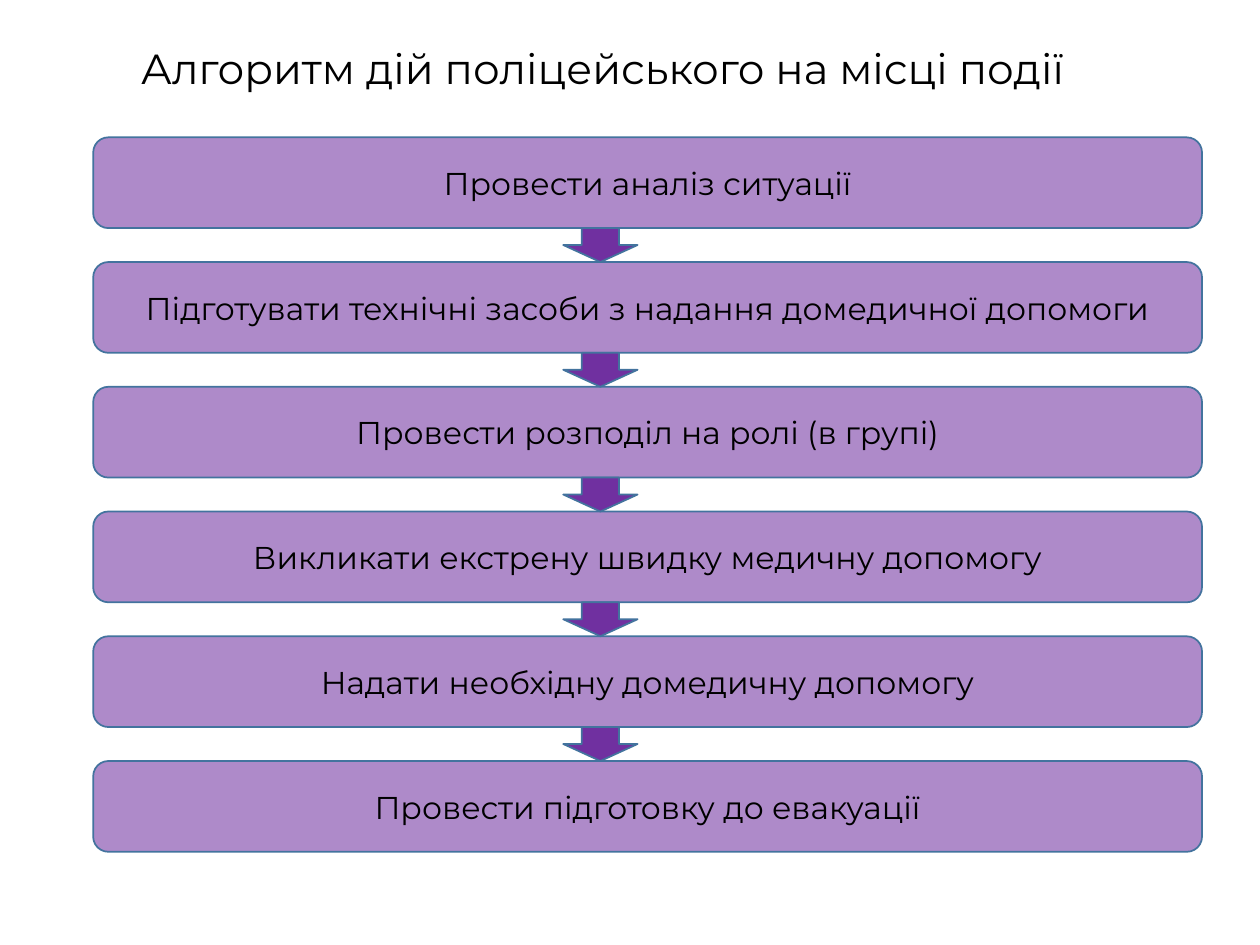
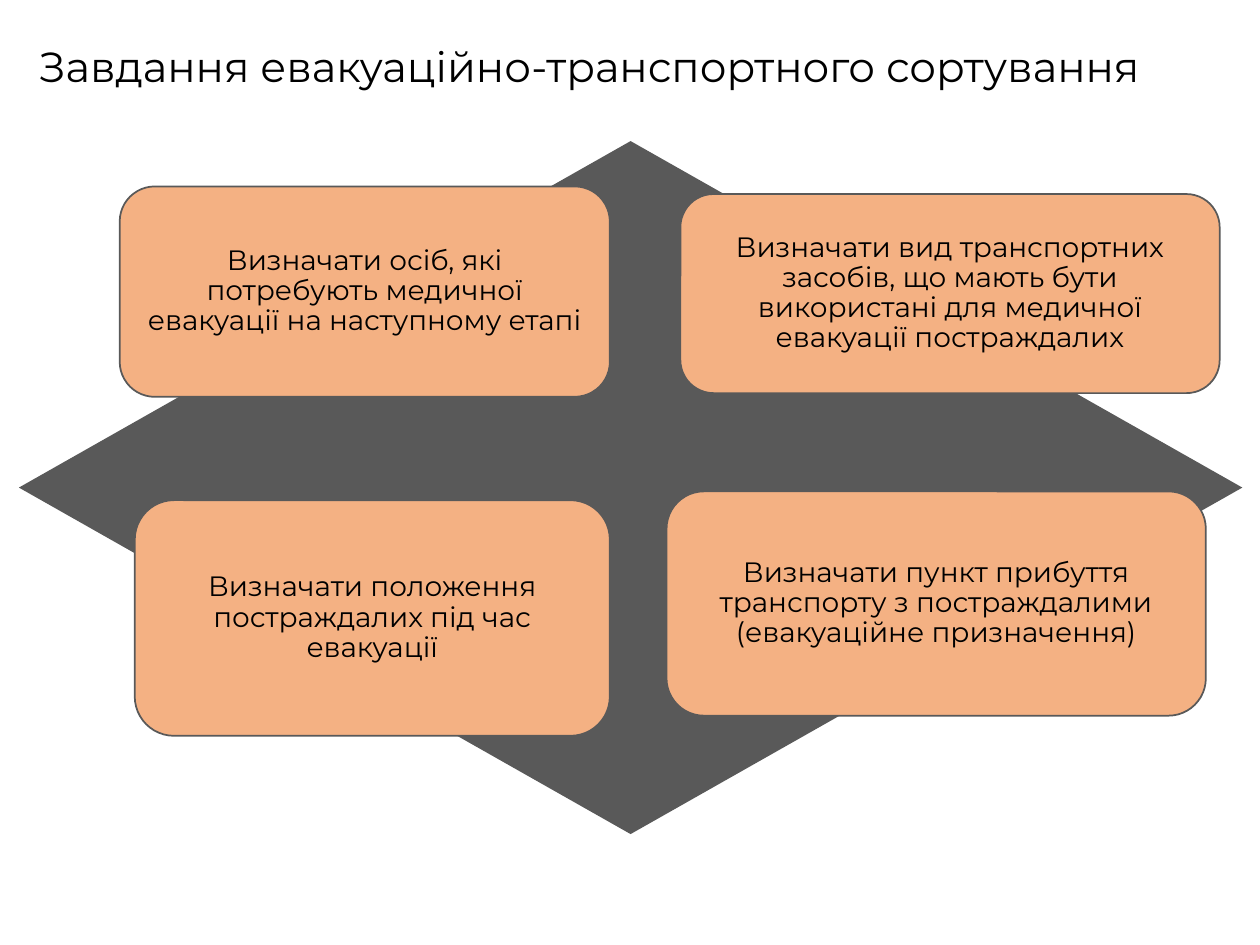
import pptx
import pptx.dml.color
import pptx.enum.shapes
import pptx.enum.text
import pptx.oxml
import pptx.oxml.ns
import pptx.util
from pptx.util import Inches

COLORS = {
    "text": "000000",
    "purple": "7030A0",
    "step_line": "43739E",
    "gray": "595959",
    "orange": "F4B183",
}
FONT = "Montserrat"
SHAPES = pptx.enum.shapes.MSO_SHAPE
ALIGN = pptx.enum.text.PP_ALIGN

STEPS = [
    "Провести аналіз ситуації",
    "Підготувати технічні засоби з надання домедичної допомоги",
    "Провести розподіл на ролі (в групі)",
    "Викликати екстрену швидку медичну допомогу",
    "Надати необхідну домедичну допомогу",
    "Провести підготовку до евакуації",
]
STEP_LEFT, STEP_TOP, STEP_WIDTH, STEP_HEIGHT, STEP_PITCH = 0.74, 1.09, 8.8, 0.72, 0.99

TASKS = [
    ("Визначати осіб, які потребують медичної евакуації на наступному етапі",
     (0.95, 1.48, 3.89, 1.67)),
    ("Визначати вид транспортних засобів, що мають бути використані для медичної "
     "евакуації постраждалих", (5.4, 1.54, 4.28, 1.58)),
    ("Визначати положення постраждалих під час евакуації", (1.07, 3.97, 3.77, 1.87)),
    ("Визначати пункт прибуття транспорту з постраждалими (евакуаційне призначення)",
     (5.29, 3.9, 4.28, 1.78)),
]


def rgb(name):
    return pptx.dml.color.RGBColor.from_string(COLORS[name])


def write_text(shape, text, size, align=ALIGN.CENTER, wrap=True, margin=None,
               line_spacing=None, space_after=None,
               anchor=pptx.enum.text.MSO_ANCHOR.MIDDLE):
    frame = shape.text_frame
    frame.word_wrap = wrap
    frame.vertical_anchor = anchor
    if margin is not None:
        frame.margin_left = frame.margin_right = Inches(margin)
        frame.margin_top = frame.margin_bottom = Inches(margin)
    paragraph = frame.paragraphs[0]
    paragraph.alignment = align
    paragraph.line_spacing = line_spacing
    if space_after is not None:
        paragraph.space_after = pptx.util.Pt(space_after)
    run = paragraph.add_run()
    run.text = text
    run.font.name = FONT
    run.font.size = pptx.util.Pt(size)
    run.font.color.rgb = rgb("text")


def add_title(slide, text, left, top, width):
    box = slide.shapes.add_textbox(Inches(left), Inches(top), Inches(width), Inches(0.5))
    write_text(box, text, 24, align=ALIGN.LEFT, wrap=False,
               anchor=pptx.enum.text.MSO_ANCHOR.TOP)
    box.text_frame.auto_size = pptx.enum.text.MSO_AUTO_SIZE.SHAPE_TO_FIT_TEXT


def add_filled_shape(slide, kind, bounds, fill, line=None, opacity=None):
    shape = slide.shapes.add_shape(kind, *map(Inches, bounds))
    shape.shadow.inherit = False
    shape.fill.solid()
    shape.fill.fore_color.rgb = rgb(fill)
    if opacity is not None:
        color = shape.fill._xPr.find(".//" + pptx.oxml.ns.qn("a:srgbClr"))
        alpha = pptx.oxml.parse_xml(
            f'<a:alpha {pptx.oxml.ns.nsdecls("a")} val="{opacity * 1000}"/>')
        color.append(alpha)
    if line:
        shape.line.color.rgb = rgb(line)
        shape.line.width = pptx.util.Pt(1)
    else:
        shape.line.fill.background()
    return shape


def add_step(slide, text, top):
    step = add_filled_shape(slide, SHAPES.ROUNDED_RECTANGLE,
                            (STEP_LEFT, top, STEP_WIDTH, STEP_HEIGHT),
                            "purple", "step_line", opacity=56)
    write_text(step, text, 18)


def add_task(slide, text, bounds):
    card = add_filled_shape(slide, SHAPES.ROUNDED_RECTANGLE, bounds, "orange", "gray")
    write_text(card, text, 16, margin=0.07, line_spacing=0.9, space_after=5.6)


def build_algorithm(slide):
    add_title(slide, "Алгоритм дій поліцейського на місці події", 1.02, 0.29, 8.24)
    tops = [STEP_TOP + index * STEP_PITCH for index in range(len(STEPS))]
    for text, top in zip(STEPS, tops):
        add_step(slide, text, top)
    for top in tops[:-1]:
        add_filled_shape(slide, SHAPES.DOWN_ARROW, (4.47, top + STEP_HEIGHT, 0.59, 0.27),
                         "purple", "step_line")


def build_tasks(slide):
    add_title(slide, "Завдання евакуаційно-транспортного сортування", 0.21, 0.27, 9.65)
    add_filled_shape(slide, SHAPES.DIAMOND, (0.15, 1.12, 9.71, 5.5), "gray")
    for text, bounds in TASKS:
        add_task(slide, text, bounds)


def main():
    presentation = pptx.Presentation()
    presentation.slide_width = Inches(10)
    presentation.slide_height = Inches(7.5)
    for build in (build_algorithm, build_tasks):
        build(presentation.slides.add_slide(presentation.slide_layouts[6]))
    presentation.save("out.pptx")


if __name__ == "__main__":
    main()
